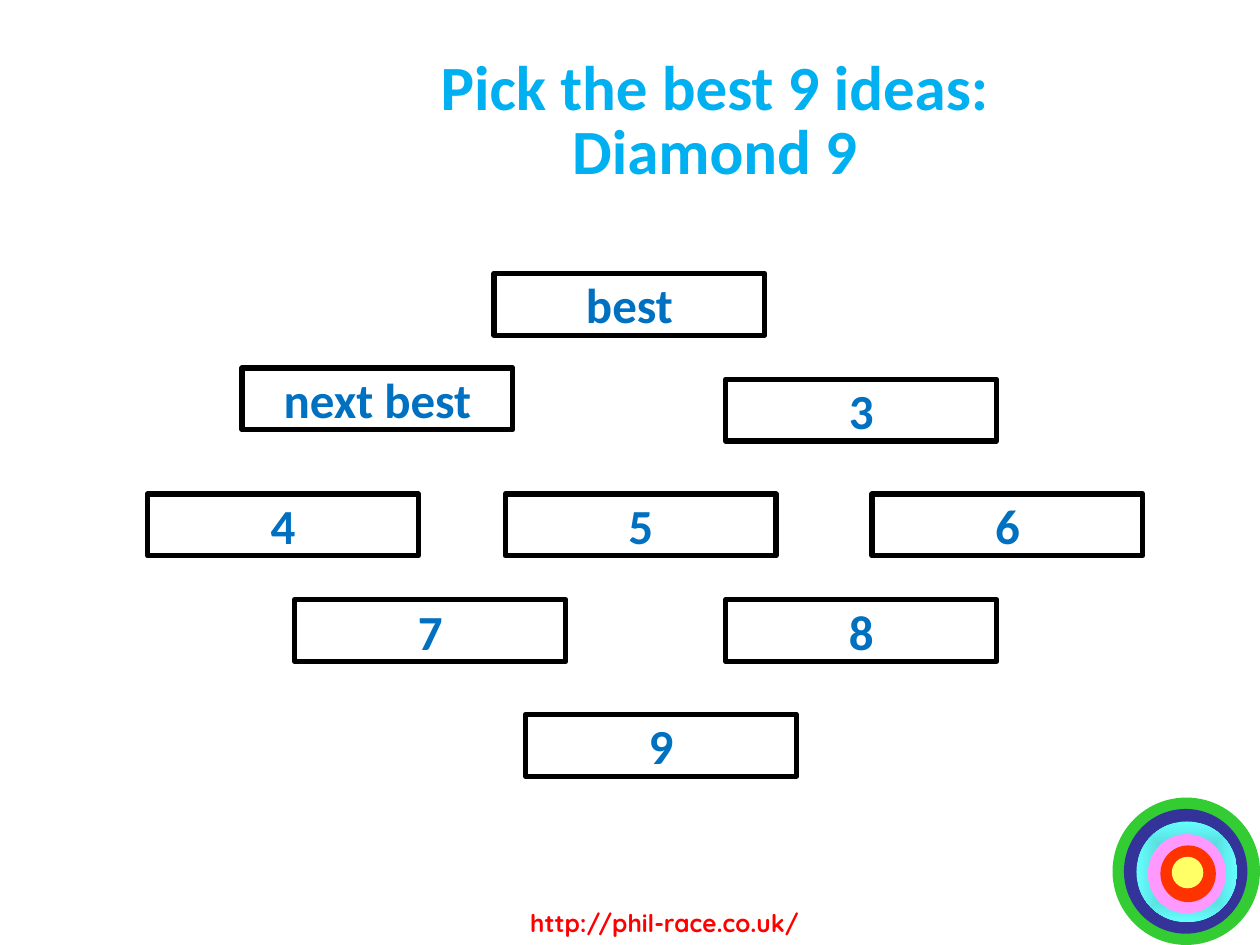
"""Build the Diamond 9 ranking slide."""
from typing import NamedTuple

from lxml import etree
from pptx import Presentation
from pptx.dml.color import RGBColor
from pptx.enum.shapes import MSO_SHAPE
from pptx.enum.text import MSO_ANCHOR, PP_ALIGN
from pptx.oxml.ns import qn
from pptx.util import Pt

PX = 9144
RECT, OVAL = MSO_SHAPE.RECTANGLE, MSO_SHAPE.OVAL
MID, TOP = MSO_ANCHOR.MIDDLE, MSO_ANCHOR.TOP
CENTER = PP_ALIGN.CENTER
CARD_W, CARD_H = 215, 49


class Ring(NamedTuple):
    x: int
    y: int
    w: int
    h: int
    fill: str


class Card(NamedTuple):
    x: int
    y: int
    text: str
    fill: str = ""


RINGS = [
    Ring(883, 633, 117, 117, "33CC33"),
    Ring(892, 642, 98, 99, "333399"),
    Ring(902, 652, 80, 80, "47B2B2 66FFFF"),
    Ring(911, 662, 62, 63, "FF99FF"),
    Ring(921, 671, 44, 45, "FF3300"),
    Ring(930, 680, 25, 25, "FFFF66"),
]
CARDS = [
    Card(392, 217, "best"),
    Card(192, 292, "next best"),
    Card(576, 301, "3"),
    Card(117, 392, "4"),
    Card(401, 392, "5"),
    Card(692, 392, "6"),
    Card(234, 476, "7", "FFFFFF"),
    Card(576, 476, "8"),
    Card(417, 567, "9"),
]


def color(code: str) -> RGBColor:
    return RGBColor.from_string(code)


def box(*dims: int) -> list[int]:
    return [n * PX for n in dims]


def write(shape, *lines: str, size: int, hue: str, font: str = "Calibri",
          anchor=MID, wrap: bool = True, space: float = 1.0) -> None:
    frame = shape.text_frame
    frame.word_wrap = wrap
    frame.vertical_anchor = anchor
    for i, line in enumerate(lines):
        para = frame.add_paragraph() if i else frame.paragraphs[0]
        para.alignment = CENTER
        para.line_spacing = space
        run = para.add_run()
        run.text = line
        run.font.name = font
        run.font.size = Pt(size)
        run.font.bold = True
        run.font.color.rgb = color(hue)


def glow(fill, codes: list[str]) -> None:
    fill.gradient()
    for stop, code in zip(fill.gradient_stops, codes):
        stop.color.rgb = color(code)
    lin = next(fill.gradient_stops[0]._gs.getparent().getparent().iter(qn("a:lin")))
    route = etree.Element(qn("a:path"), {"path": "shape"})
    etree.SubElement(route, qn("a:fillToRect"), {k: "50000" for k in "ltrb"})
    lin.getparent().replace(lin, route)


def draw_ring(slide, ring: Ring) -> None:
    shape = slide.shapes.add_shape(OVAL, *box(*ring[:4]))
    shape.shadow.inherit = False
    shape.line.fill.background()
    codes = ring.fill.split()
    if len(codes) > 1:
        glow(shape.fill, codes)
    else:
        shape.fill.solid()
        shape.fill.fore_color.rgb = color(ring.fill)


def draw_card(slide, card: Card) -> None:
    shape = slide.shapes.add_shape(RECT, *box(card.x, card.y, CARD_W, CARD_H))
    shape.shadow.inherit = False
    if card.fill:
        shape.fill.solid()
        shape.fill.fore_color.rgb = color(card.fill)
    else:
        shape.fill.background()
    shape.line.color.rgb = color("000000")
    shape.line.width = Pt(3)
    write(shape, card.text, size=28, hue="0070C0", wrap=False)


def main() -> None:
    deck = Presentation()
    deck.slide_width, deck.slide_height = box(1000, 750)
    slide = deck.slides.add_slide(deck.slide_layouts[6])
    for ring in RINGS:
        draw_ring(slide, ring)
    link = slide.shapes.add_textbox(*box(383, 716, 289, 34))
    write(link, "http://phil-race.co.uk/", size=14, hue="FF0000",
          font="Quicksand", anchor=TOP)
    title = slide.shapes.add_textbox(*box(146, 38, 854, 119))
    write(title, "Pick the best 9 ideas: ", "Diamond 9 ", size=36,
          hue="00B0F0", space=0.85)
    for card in CARDS:
        draw_card(slide, card)
    deck.save("out.pptx")


if __name__ == "__main__":
    main()
